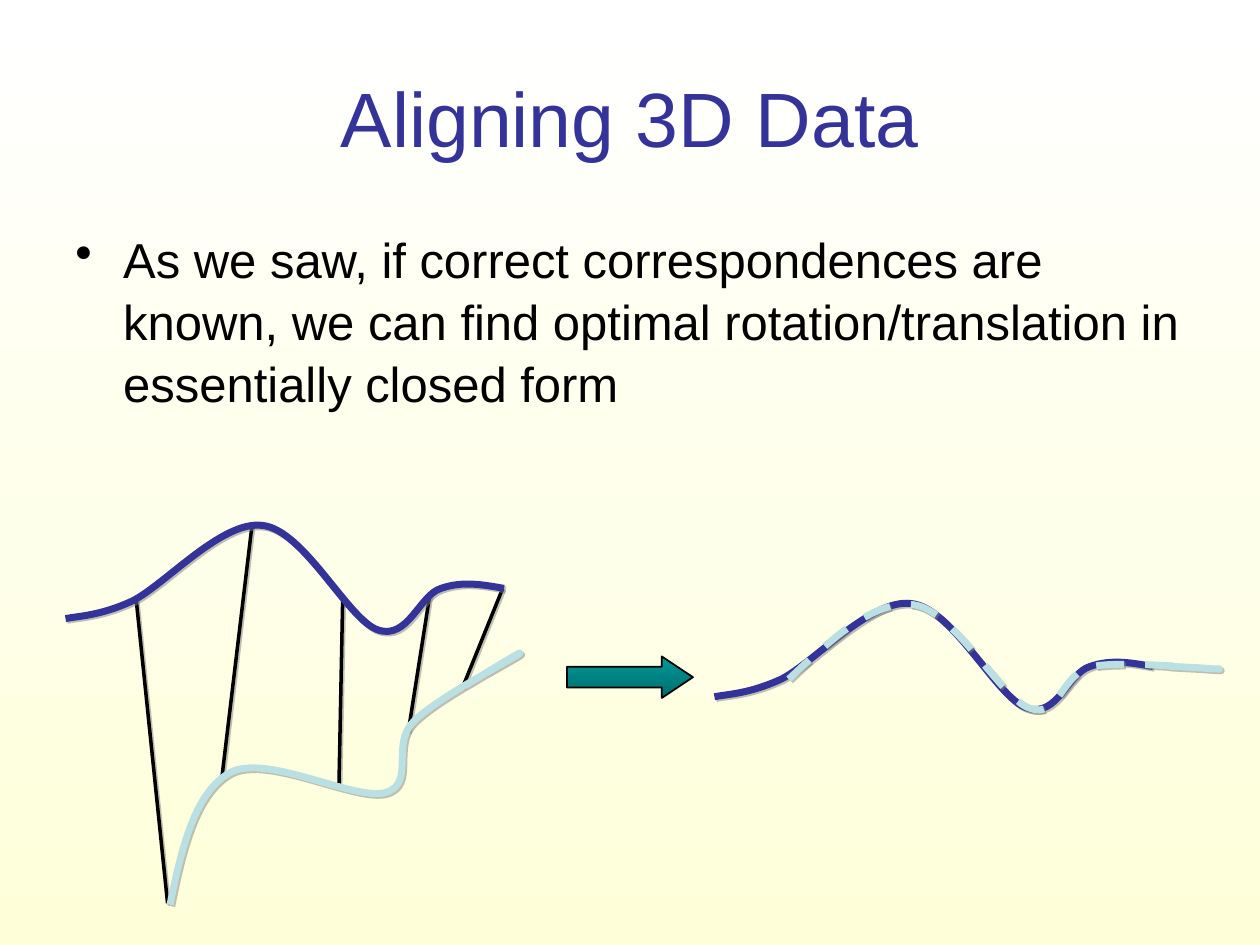
from lxml import etree
from pptx import Presentation
from pptx.dml.color import RGBColor
from pptx.enum.dml import MSO_LINE
from pptx.enum.shapes import MSO_CONNECTOR, MSO_SHAPE
from pptx.enum.text import MSO_ANCHOR, PP_ALIGN
from pptx.oxml import parse_xml
from pptx.oxml.ns import nsdecls, qn
from pptx.util import Inches, Pt

STRAIGHT = MSO_CONNECTOR.STRAIGHT
RIGHT_ARROW = MSO_SHAPE.RIGHT_ARROW
DASH = MSO_LINE.DASH
MIDDLE, TOP = MSO_ANCHOR.MIDDLE, MSO_ANCHOR.TOP
CENTER, LEFT = PP_ALIGN.CENTER, PP_ALIGN.LEFT

BLACK = RGBColor(0x00, 0x00, 0x00)
WHITE = RGBColor(0xFF, 0xFF, 0xFF)
CREAM = RGBColor(0xFE, 0xFF, 0xD9)
INDIGO = RGBColor(0x33, 0x33, 0x99)
PALE_BLUE = RGBColor(0xBB, 0xE0, 0xE3)
TEAL = RGBColor(0x00, 0x99, 0x99)
DARK_TEAL = RGBColor(0x00, 0x6D, 0x6D)

CORRESPONDENCES = [
    ((1.08, 4.75), (1.33, 7.17)),
    ((2, 4.17), (1.76, 6.18)),
    ((2.72, 4.75), (2.69, 6.25)),
    ((3.99, 4.67), (3.67, 5.46)),
    ((3.41, 4.73), (3.24, 5.81)),
]
SCAN = [
    (0.52, 4.91),
    (0.61, 4.89), (0.79, 4.89), (1.05, 4.77),
    (1.31, 4.64), (1.76, 4.13), (2.08, 4.17),
    (2.41, 4.2), (2.76, 4.92), (3, 5),
    (3.24, 5.08), (3.33, 4.72), (3.5, 4.67),
    (3.67, 4.61), (3.83, 4.64), (4, 4.67),
]
UNALIGNED_SCAN = [
    (1.35, 7.18),
    (1.44, 6.73), (1.55, 6.28), (1.83, 6.13),
    (2.12, 5.98), (2.82, 6.36), (3.06, 6.29),
    (3.3, 6.22), (3.1, 5.91), (3.28, 5.73),
    (3.45, 5.55), (4.05, 5.24), (4.12, 5.19),
    (4.18, 5.14), (3.78, 5.39), (3.69, 5.44),
]
ALIGNED_SCAN = [
    (6.26, 5.39),
    (6.59, 5.08), (6.93, 4.76), (7.25, 4.8),
    (7.57, 4.84), (7.94, 5.54), (8.17, 5.62),
    (8.41, 5.71), (8.42, 5.34), (8.67, 5.29),
    (8.92, 5.24), (9.58, 5.31), (9.67, 5.31),
    (9.75, 5.31), (9.27, 5.29), (9.17, 5.28),
]
SHIFT_X, SHIFT_Y = 5.15, 0.62


class Deck:
    """Draws styled elements on the current slide."""

    font = "Arial"

    def __init__(self, prs):
        self.s = prs.slides.add_slide(prs.slide_layouts[6])
        self.gradient(self.s.background.fill, WHITE, CREAM)

    def gradient(self, fill, start, end):
        fill.gradient()
        fill.gradient_angle = 270
        for stop, color in zip(fill.gradient_stops, (start, end)):
            stop.color.rgb = color

    def shadow(self, shape):
        shape._element.spPr.append(parse_xml(
            f'<a:effectLst {nsdecls("a")}>'
            '<a:outerShdw dist="17780" dir="2700000" algn="ctr" rotWithShape="0">'
            '<a:srgbClr val="808080"><a:alpha val="50000"/></a:srgbClr>'
            '</a:outerShdw></a:effectLst>'))

    def text(self, box, text, size, color, align, anchor, bullet=False):
        tf = self.s.shapes.add_textbox(*map(Inches, box)).text_frame
        tf.word_wrap = True
        tf.vertical_anchor = anchor
        p = tf.paragraphs[0]
        p.text = text
        p.alignment = align
        if bullet:
            p.line_spacing = 1.05
            pPr = p._p.get_or_add_pPr()
            pPr.set("marL", str(Inches(0.38)))
            pPr.set("indent", str(Inches(-0.38)))
            etree.SubElement(pPr, qn("a:buChar"), char="•")
        font = p.runs[0].font
        font.name, font.size, font.color.rgb = self.font, Pt(size), color

    def line(self, start, end):
        cn = self.s.shapes.add_connector(STRAIGHT, *map(Inches, start + end))
        cn.line.color.rgb = BLACK
        cn.line.width = Pt(2)
        self.shadow(cn)

    def curve(self, points, color, dash=None):
        pts = [(Inches(x), Inches(y)) for x, y in points]
        fb = self.s.shapes.build_freeform(*pts[0])
        fb.add_line_segments(pts[1:], close=False)
        sp = fb.convert_to_shape()
        segments = list(sp._element.iter(qn("a:lnTo")))
        for i in range(0, len(segments), 3):
            first, *others = segments[i:i + 3]
            bezier = etree.Element(qn("a:cubicBezTo"))
            first.addprevious(bezier)
            for segment in (first, *others):
                bezier.append(segment[0])
                segment.getparent().remove(segment)
        sp.fill.background()
        sp.line.color.rgb = color
        sp.line.width = Pt(4)
        if dash:
            sp.line.dash_style = dash
        self.shadow(sp)

    def arrow(self, box):
        sp = self.s.shapes.add_shape(RIGHT_ARROW, *map(Inches, box))
        sp.adjustments[0], sp.adjustments[1] = 0.5, 0.75
        sp.shadow.inherit = False
        self.gradient(sp.fill, TEAL, DARK_TEAL)
        sp.line.color.rgb = BLACK
        sp.line.width = Pt(1)


def main():
    prs = Presentation()
    prs.slide_width, prs.slide_height = Inches(10), Inches(7.5)
    deck = Deck(prs)
    deck.text((0.5, 0.3, 9, 1.25), "Aligning 3D Data", 44, INDIGO, CENTER, MIDDLE)
    deck.text((0.5, 1.75, 9, 4.95),
              "As we saw, if correct correspondences are known, we can find "
              "optimal rotation/translation in essentially closed form",
              28, BLACK, LEFT, TOP, bullet=True)
    for start, end in CORRESPONDENCES:
        deck.line(start, end)
    deck.curve(UNALIGNED_SCAN, PALE_BLUE)
    deck.curve(SCAN, INDIGO)
    deck.arrow((4.5, 5.21, 1, 0.33))
    deck.curve([(x + SHIFT_X, y + SHIFT_Y) for x, y in SCAN], INDIGO)
    deck.curve(ALIGNED_SCAN, PALE_BLUE, DASH)
    prs.save("out.pptx")


if __name__ == "__main__":
    main()
